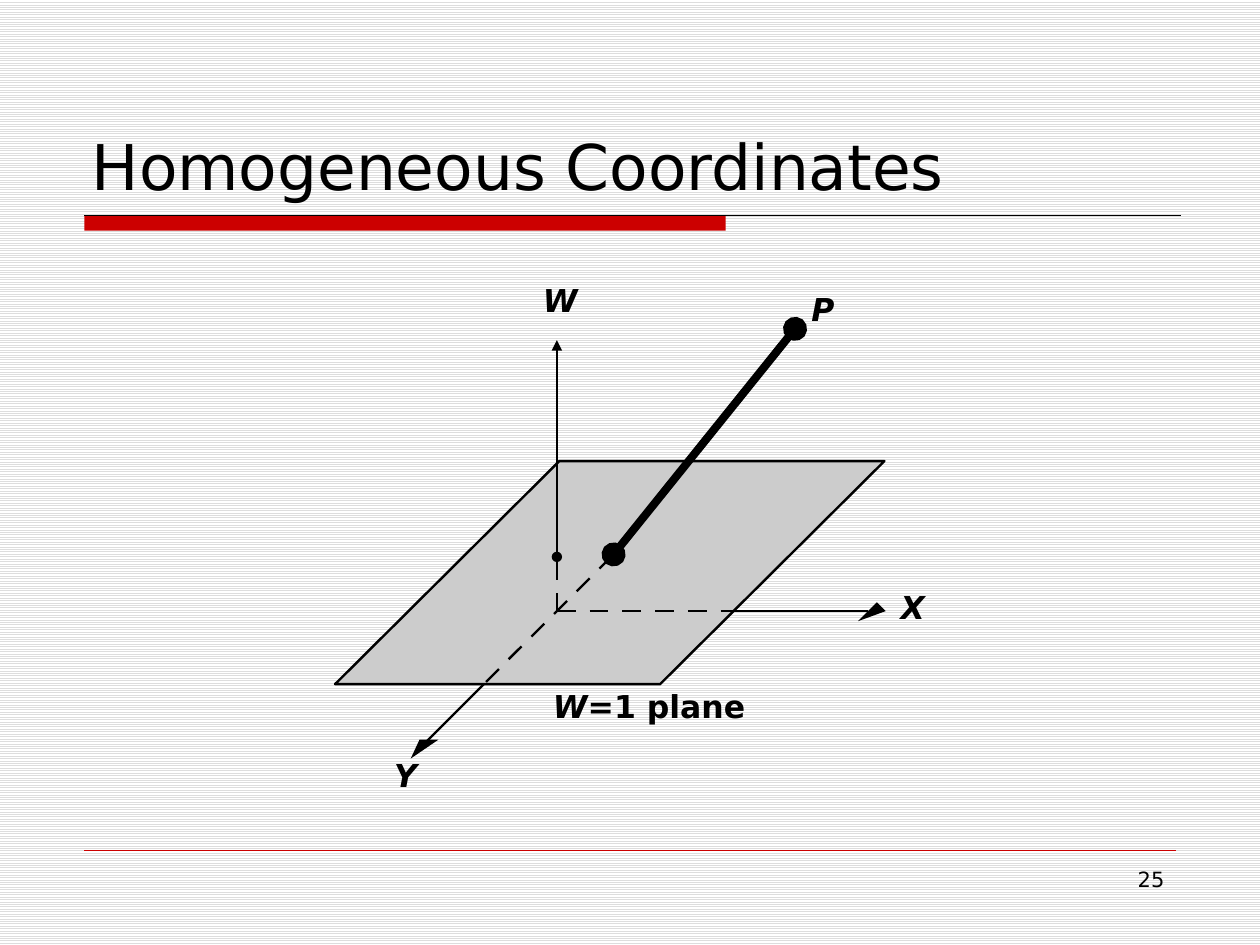
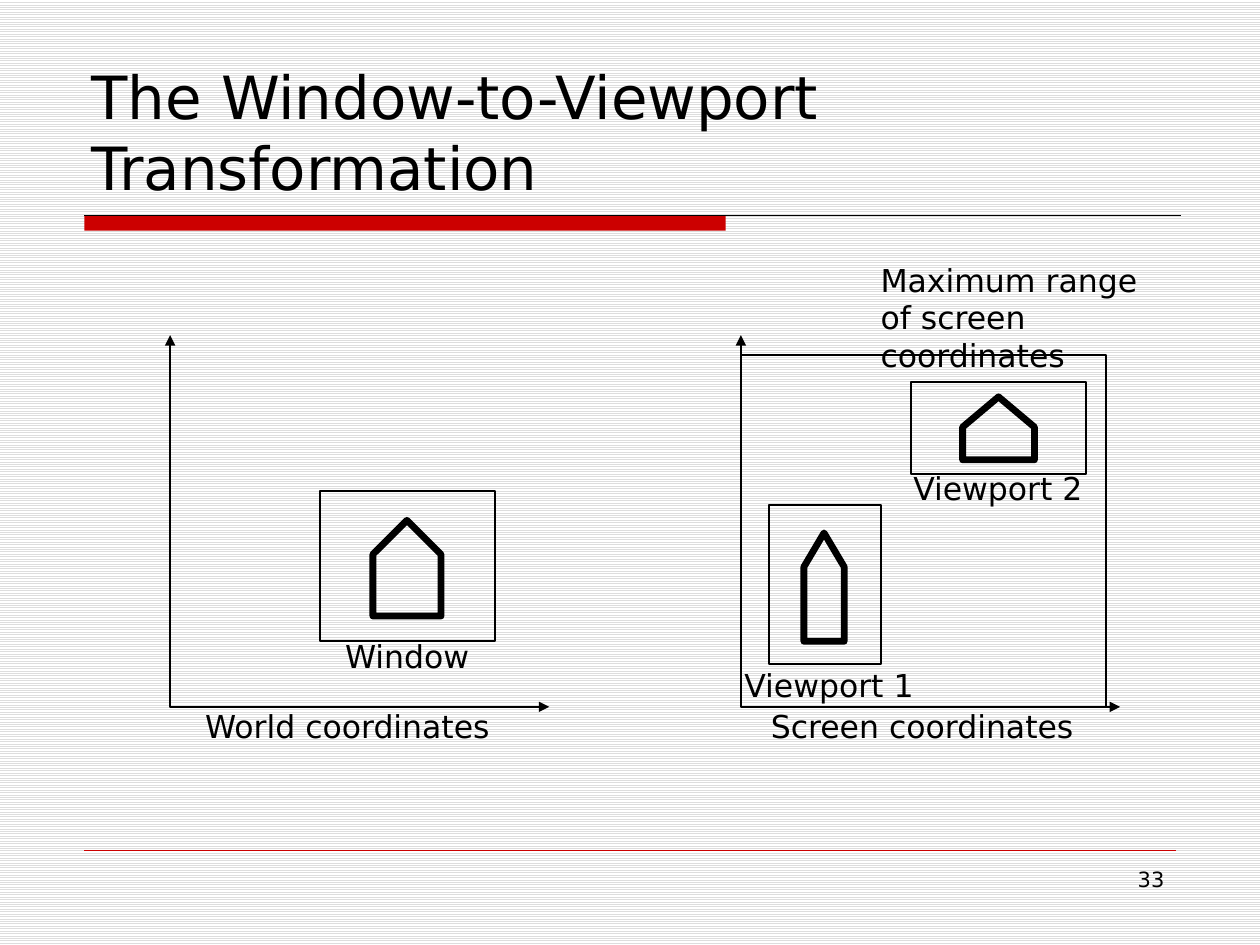
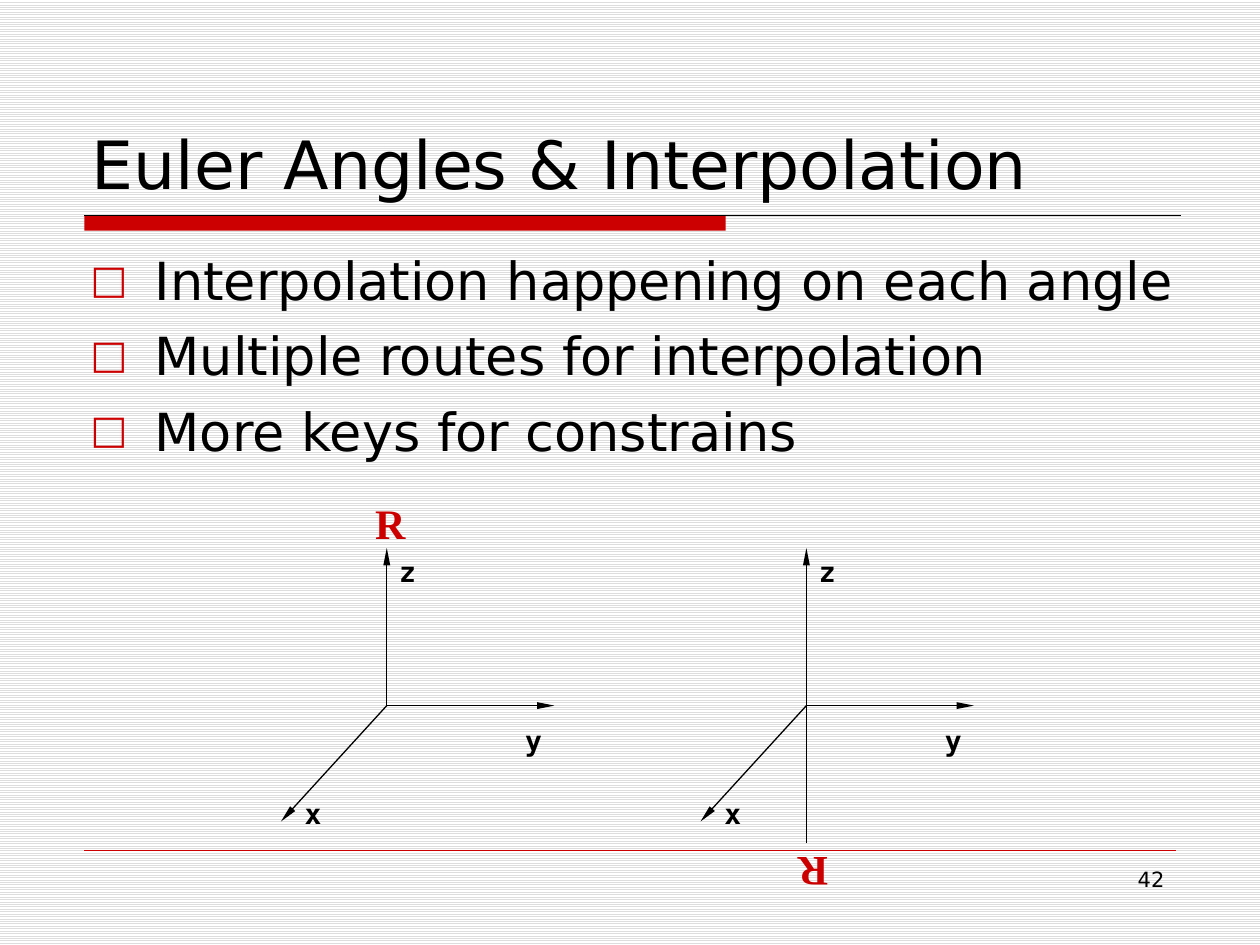
from dataclasses import dataclass
from typing import Optional

from lxml.etree import SubElement
from pptx import Presentation
from pptx.dml.color import RGBColor
from pptx.enum.dml import MSO_PATTERN
from pptx.enum.shapes import MSO_CONNECTOR, MSO_SHAPE
from pptx.enum.text import MSO_ANCHOR, PP_ALIGN
from pptx.oxml.ns import qn
from pptx.util import Inches, Pt

BLACK = RGBColor(0x00, 0x00, 0x00)
WHITE = RGBColor(0xFF, 0xFF, 0xFF)
RED = RGBColor(0xCC, 0x00, 0x00)
PLANE_GREY = RGBColor(0xCC, 0xCC, 0xCC)
STRIPE_GREY = RGBColor(0xDD, 0xDD, 0xDD)

SANS = "DejaVu Sans"
MONO = "DejaVu Sans Mono"
SERIF = "Times New Roman"

LABEL = {"name": SANS, "size": Pt(18)}
POINT_LABEL = {**LABEL, "bold": True, "italic": True}
AXIS_LABEL = {"name": MONO, "size": Pt(16), "bold": True}
ROTATION_LABEL = {"name": SERIF, "size": Pt(24), "bold": True}
BODY = {"name": SANS, "size": Pt(30)}
PAGE_NUMBER = {"name": SANS, "size": Pt(12)}

DIAGRAM_LINE = 1.38
FRAME_LINE = 1.13
HOUSE_LINE = 3.88
AXIS_LINE = 0.75

Point = tuple[float, float]


@dataclass(frozen=True)
class Box:
    left: float
    top: float
    width: float
    height: float

    def emu(self) -> list[int]:
        return [Inches(v) for v in (self.left, self.top, self.width, self.height)]


@dataclass(frozen=True)
class Label:
    text: str
    box: Box
    wrap: bool = False
    rotation: int = 0


@dataclass(frozen=True)
class Ends:
    """Arrowhead types at the two ends of a line, and their size."""
    head: Optional[str] = None
    tail: Optional[str] = None
    width: str = "med"
    length: str = "med"


@dataclass(frozen=True)
class House:
    left: float
    right: float
    top: float
    eave: float
    bottom: float

    def outline(self) -> list[Point]:
        return [(self.left, self.bottom), (self.left, self.eave),
                ((self.left + self.right) / 2, self.top),
                (self.right, self.eave), (self.right, self.bottom)]


TITLE_BOX = Box(0.63, 0.33, 8.75, 1.33)
NUMBER_BOX = Box(7.17, 6.83, 2.17, 0.52)
BODY_BOX = Box(0.62, 1.92, 8.83, 4.67)
NO_ENDS = Ends()
AXIS_ENDS = Ends(tail="triangle", width="sm", length="lg")


def format_run(r, style: dict, color: RGBColor = BLACK) -> None:
    for name, value in style.items():
        setattr(r.font, name, value)
    r.font.color.rgb = color


def style_line(line, width: float, color: RGBColor, ends: Ends) -> None:
    line.color.rgb = color
    line.width = Pt(width)
    ln = line._get_or_add_ln()
    for tag, kind in (("a:headEnd", ends.head), ("a:tailEnd", ends.tail)):
        if kind:
            SubElement(ln, qn(tag), type=kind, w=ends.width, len=ends.length)


def add_line(slide, start: Point, end: Point, width: float = DIAGRAM_LINE,
             color: RGBColor = BLACK, ends: Ends = NO_ENDS) -> None:
    x1, y1, x2, y2 = (Inches(v) for v in (*start, *end))
    c = slide.shapes.add_connector(MSO_CONNECTOR.STRAIGHT, x1, y1, x2, y2)
    style_line(c.line, width, color, ends)
    SubElement(c._element.spPr, qn("a:effectLst"))


def add_dashes(slide, start: Point, step: Point, share: float, count: int) -> None:
    """Draw strokes one step apart, each covering a share of its step."""
    for i in range(count):
        x, y = start[0] + i * step[0], start[1] + i * step[1]
        add_line(slide, (x, y), (x + share * step[0], y + share * step[1]))


def style_shape(sp, fill: Optional[RGBColor], width: float, ends: Ends = NO_ENDS) -> None:
    """Fill and outline a shape; no fill or a zero width leaves that part out."""
    sp.shadow.inherit = False
    if fill is None:
        sp.fill.background()
    else:
        sp.fill.solid()
        sp.fill.fore_color.rgb = fill
    if width:
        style_line(sp.line, width, BLACK, ends)
    else:
        sp.line.fill.background()


def add_path(slide, points: list[Point], width: float = FRAME_LINE, closed: bool = False,
             fill: Optional[RGBColor] = None, ends: Ends = NO_ENDS) -> None:
    first, *rest = [(Inches(x), Inches(y)) for x, y in points]
    builder = slide.shapes.build_freeform(*first)
    builder.add_line_segments(rest, close=closed)
    style_shape(builder.convert_to_shape(), fill, width, ends)


def add_rect(slide, box: Box, fill: Optional[RGBColor] = None,
             width: float = FRAME_LINE) -> None:
    sp = slide.shapes.add_shape(MSO_SHAPE.RECTANGLE, *box.emu())
    style_shape(sp, fill, width)


def add_text(slide, label: Label, style: dict, color: RGBColor = BLACK):
    sp = slide.shapes.add_textbox(*label.box.emu())
    sp.rotation = label.rotation
    tf = sp.text_frame
    tf.word_wrap = label.wrap
    p = tf.paragraphs[0]
    p.text = label.text
    for r in p.runs:
        format_run(r, style, color)
    return tf


def add_bullets(slide, items: list[str]) -> None:
    tf = slide.shapes.add_textbox(*BODY_BOX.emu()).text_frame
    tf.word_wrap = True
    for i, item in enumerate(items):
        p = tf.add_paragraph() if i else tf.paragraphs[0]
        p.space_before = Pt(7)
        r = p.add_run()
        r.text = item
        format_run(r, BODY)
        pPr = p._p.get_or_add_pPr()
        pPr.set("marL", str(Inches(0.51)))
        pPr.set("indent", str(-Inches(0.51)))
        SubElement(SubElement(pPr, qn("a:buClr")), qn("a:srgbClr"), val=str(RED))
        SubElement(pPr, qn("a:buSzPct"), val="75000")
        SubElement(pPr, qn("a:buFont"), typeface=SANS)
        SubElement(pPr, qn("a:buChar"), char="□")


def add_slide(prs, title: str, title_size: int, number: int):
    """Add a slide with the shared title, bands and page number."""
    slide = prs.slides.add_slide(prs.slide_layouts[6])
    add_rect(slide, Box(0.67, 1.71, 5.09, 0.12), RED, 0)
    add_line(slide, (0.67, 1.71), (9.37, 1.71), 0.75)
    add_line(slide, (0.67, 6.75), (9.33, 6.75), 0.25, RED)
    tf = add_text(slide, Label(title, TITLE_BOX, wrap=True),
                  {"name": SANS, "size": Pt(title_size)})
    tf.vertical_anchor = MSO_ANCHOR.BOTTOM
    tf = add_text(slide, Label(str(number), NUMBER_BOX, wrap=True), PAGE_NUMBER)
    tf.paragraphs[0].alignment = PP_ALIGN.RIGHT
    return slide


def homogeneous_slide(prs) -> None:
    slide = add_slide(prs, "Homogeneous Coordinates", 36, 25)
    origin = (4.42, 4.85)
    x_edge, y_edge = (5.82, 4.85), (3.84, 5.43)
    add_path(slide, [(4.44, 3.66), (7.02, 3.66), (5.24, 5.43), (2.66, 5.43)],
             DIAGRAM_LINE, closed=True, fill=PLANE_GREY)
    for arrowhead in ([(3.33, 5.87), (3.48, 5.87), (3.26, 6.02)],
                      [(6.81, 4.93), (6.96, 4.78), (7.03, 4.85)]):
        add_path(slide, arrowhead, 0, closed=True, fill=BLACK)
    add_line(slide, (4.87, 4.4), (6.31, 2.61), 4.63, ends=Ends("oval", "oval"))
    add_dashes(slide, origin, (0.26, 0), 0.57, 6)
    add_dashes(slide, (4.86, 4.41), (-0.18, 0.18), 0.57, 6)
    add_dashes(slide, origin, (0, -0.25), 0.57, 2)
    add_line(slide, x_edge, (6.89, 4.85))
    add_line(slide, y_edge, (3.39, 5.88))
    add_line(slide, (4.42, 4.42), (4.42, 2.7), ends=Ends("oval", "triangle"))
    for label in (Label("X", Box(7.05, 4.62, 0.39, 0.4)),
                  Label("Y", Box(3.03, 5.95, 0.39, 0.4)),
                  Label("W", Box(4.21, 2.18, 0.48, 0.4)),
                  Label("P", Box(6.34, 2.25, 0.39, 0.4))):
        add_text(slide, label, POINT_LABEL)
    tf = add_text(slide, Label("W", Box(4.29, 5.4, 1.73, 0.4)), POINT_LABEL)
    r = tf.paragraphs[0].add_run()
    r.text = "=1 plane"
    format_run(r, {**POINT_LABEL, "italic": False})


def viewport_slide(prs) -> None:
    slide = add_slide(prs, "The Window-to-Viewport Transformation", 34, 33)
    for left in (1.35, 5.88):
        add_path(slide, [(left, 2.66), (left, 5.61), (left + 3.01, 5.61)],
                 ends=Ends("triangle", "triangle"))
    add_path(slide, [(5.88, 2.82), (8.78, 2.82), (8.78, 5.61)])
    for frame, house in (
            (Box(2.54, 3.9, 1.39, 1.19), House(2.96, 3.5, 4.13, 4.4, 4.89)),
            (Box(6.1, 4.01, 0.89, 1.26), House(6.38, 6.7, 4.23, 4.5, 5.09)),
            (Box(7.23, 3.03, 1.39, 0.73), House(7.64, 8.21, 3.15, 3.39, 3.65))):
        add_rect(slide, frame)
        add_path(slide, house.outline(), HOUSE_LINE, closed=True)
    for label in (
            Label("Viewport 1", Box(5.81, 5.24, 1.56, 0.4)),
            Label("Viewport 2", Box(7.15, 3.67, 1.56, 0.4)),
            Label("Window", Box(2.64, 5.01, 1.19, 0.4)),
            Label("World coordinates", Box(1.53, 5.56, 2.47, 0.4)),
            Label("Screen coordinates", Box(6.02, 5.56, 2.6, 0.4)),
            Label("Maximum range\vof screen coordinates", Box(6.89, 2.02, 2.85, 0.7),
                  wrap=True)):
        add_text(slide, label, LABEL)


def add_axes(slide, x: float, y: float) -> None:
    """Draw the labelled x, y and z axes from an origin."""
    for dx, dy in ((0, -1.25), (-0.84, 0.92), (1.33, 0)):
        add_line(slide, (x, y), (x + dx, y + dy), AXIS_LINE, ends=AXIS_ENDS)
    for name, dx, dy in (("z", 0, -1.25), ("x", -0.75, 0.67), ("y", 1, 0.09)):
        add_text(slide, Label(name, Box(x + dx, y + dy, 0.34, 0.37)), AXIS_LABEL)


def euler_slide(prs) -> None:
    slide = add_slide(prs, "Euler Angles & Interpolation", 38, 42)
    add_bullets(slide, ["Interpolation happening on each angle",
                        "Multiple routes for interpolation",
                        "More keys for constrains"])
    for x in (3.07, 6.4):
        add_axes(slide, x, 5.6)
    add_line(slide, (6.4, 5.6), (6.4, 6.69), AXIS_LINE)
    for label in (Label("R", Box(2.88, 3.9, 0.44, 0.5)),
                  Label("R", Box(6.23, 6.69, 0.44, 0.5), rotation=180)):
        add_text(slide, label, ROTATION_LABEL, RED)


def main() -> None:
    prs = Presentation()
    prs.slide_width, prs.slide_height = Inches(10), Inches(7.5)
    fill = prs.slide_master.background.fill
    fill.patterned()
    fill.pattern = MSO_PATTERN.LIGHT_HORIZONTAL
    fill.fore_color.rgb = STRIPE_GREY
    fill.back_color.rgb = WHITE
    homogeneous_slide(prs)
    viewport_slide(prs)
    euler_slide(prs)
    prs.save("out.pptx")


if __name__ == "__main__":
    main()
